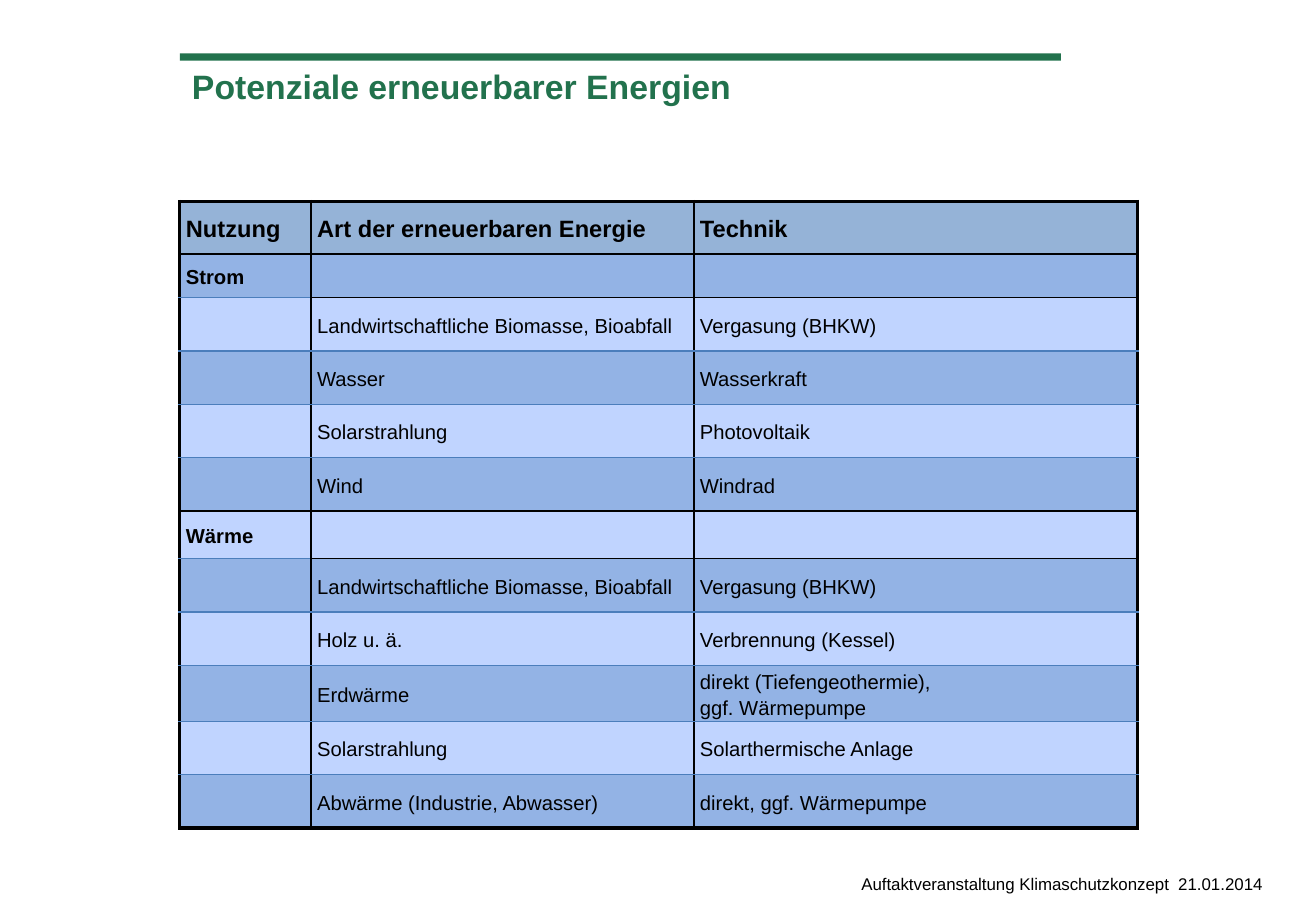
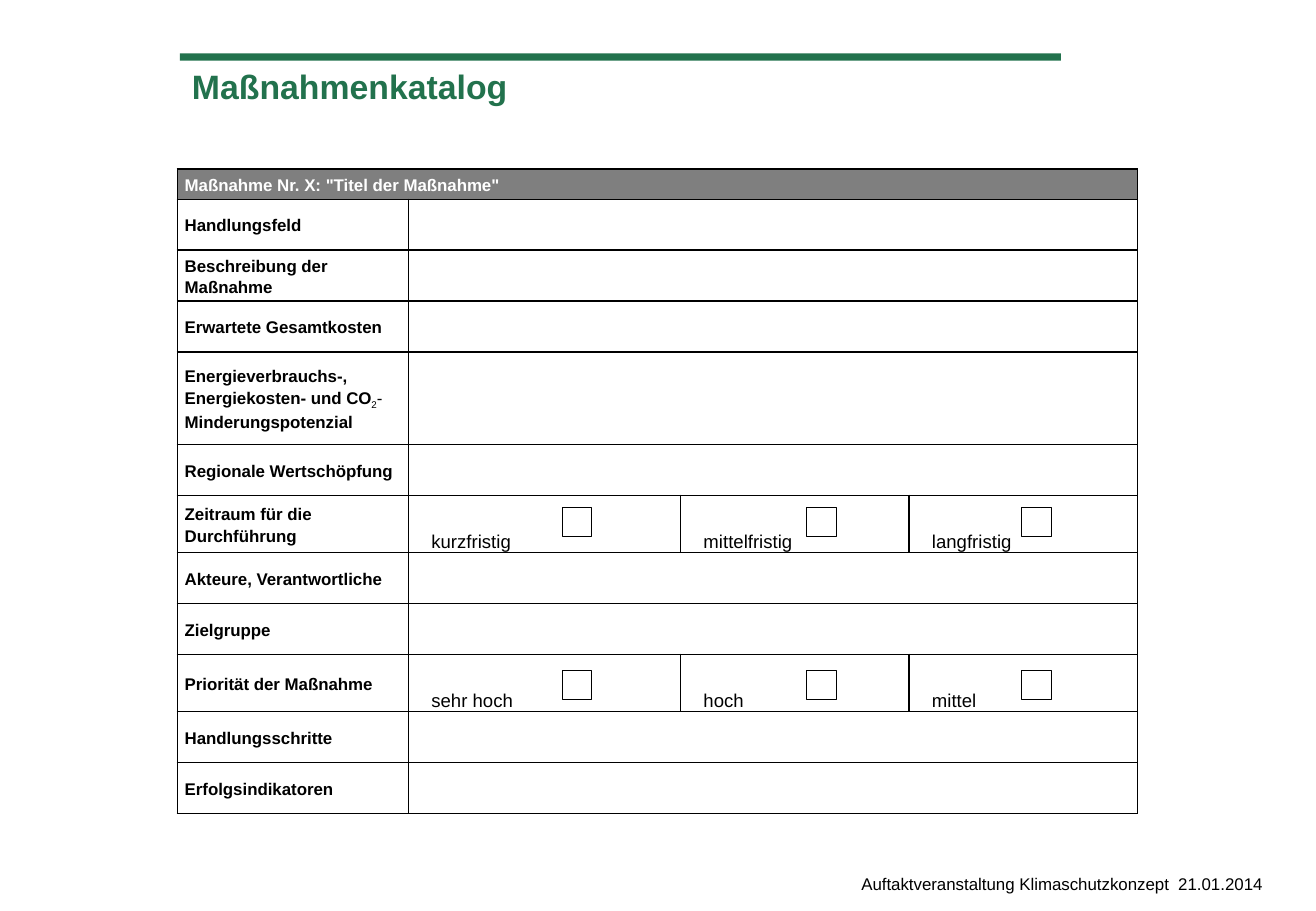
from lxml import etree
from pptx import Presentation
from pptx.dml.color import RGBColor
from pptx.enum.shapes import MSO_SHAPE
from pptx.enum.text import MSO_ANCHOR, PP_ALIGN
from pptx.oxml.ns import qn
from pptx.util import Inches, Pt

RECTANGLE = MSO_SHAPE.RECTANGLE
TOP, MIDDLE, BOTTOM = MSO_ANCHOR.TOP, MSO_ANCHOR.MIDDLE, MSO_ANCHOR.BOTTOM
LEFT = PP_ALIGN.LEFT
color = RGBColor.from_string

FONT = "Arial"
GREEN, BLACK, WHITE, GREY = "22724D", "000000", "FFFFFF", "7F7F7F"
HEADER_BLUE, DARK_BLUE, LIGHT_BLUE = "95B3D7", "93B3E5", "C0D4FF"
FOOTER = "Auftaktveranstaltung Klimaschutzkonzept  21.01.2014"

# Cell lines as colour and width in points
THICK, THIN, BLUE_LINE = (BLACK, 2.25), (BLACK, 1), ("4B7EBC", 0.75)


def write(frame, text, size=10, fill=BLACK, bold=False, spacing=None, baseline=None):
    """Append text to the first paragraph; a newline becomes a line break."""
    paragraph = frame.paragraphs[0]
    paragraph.alignment = LEFT
    if spacing:
        paragraph.line_spacing = spacing
    for index, line in enumerate(text.split("\n")):
        if index:
            paragraph.add_line_break()
        run = paragraph.add_run()
        run.text = line
        run.font.name, run.font.size, run.font.bold = FONT, Pt(size), bold
        run.font.color.rgb = color(fill)
        if baseline:
            run._r.get_or_add_rPr().set("baseline", str(baseline))


def format_cell(cell, lines, inset, fill=None):
    """Set lines (left, right, top, bottom), side margins and fill of a cell."""
    properties = cell._tc.get_or_add_tcPr()
    for side, (line_color, width) in zip("LRTB", lines):
        line = etree.SubElement(properties, qn(f"a:ln{side}"), w=str(Pt(width)))
        solid = etree.SubElement(line, qn("a:solidFill"))
        etree.SubElement(solid, qn("a:srgbClr"), val=line_color)
    cell.margin_left = cell.margin_right = Inches(inset)
    cell.margin_top = cell.margin_bottom = 0
    cell.vertical_anchor = MIDDLE
    if fill:
        cell.fill.solid()
        cell.fill.fore_color.rgb = color(fill)
    else:
        cell.fill.background()


presentation = Presentation()
presentation.slide_width, presentation.slide_height = Inches(10.83), Inches(7.5)
layout = presentation.slide_layouts[5]

# Title position shared by both slides
layout_title = layout.placeholders[0]
layout_title.left, layout_title.top = Inches(1.48), Inches(0.49)
layout_title.width, layout_title.height = Inches(7.16), Inches(0.93)

# Slides with title, footer and an empty table
tables = []
for title, left, top, columns, rows in (
    ("Potenziale erneuerbarer Energien", 1.48, 1.66, [1.08, 3.15, 3.65],
     [0.43, 0.36] + [0.44] * 4 + [0.39] + [0.44] * 5),
    ("Maßnahmenkatalog", 1.46, 1.39, [1.9, 2.24, 1.88, 1.88],
     [0.25] + [0.42] * 3 + [0.76, 0.42, 0.47, 0.42, 0.42, 0.47, 0.42, 0.42]),
):
    slide = presentation.slides.add_slide(layout)
    title_frame = slide.shapes.title.text_frame
    title_frame.vertical_anchor = TOP
    write(title_frame, title, size=20, fill=GREEN, bold=True)

    footer = slide.shapes.add_textbox(Inches(6.99), Inches(7.14), Inches(3.84), Inches(0.31))
    footer.text_frame.word_wrap = True
    write(footer.text_frame, FOOTER)

    table = slide.shapes.add_table(
        len(rows), len(columns), Inches(left), Inches(top),
        Inches(sum(columns)), Inches(sum(rows))).table
    table.first_row = table.horz_banding = False
    for column, width in zip(table.columns, columns):
        column.width = Inches(width)
    for row, height in zip(table.rows, rows):
        row.height = Inches(height)
    tables.append(table)

# Green bar, moved to the layout so that both slides show it
bar = slide.shapes.add_shape(RECTANGLE, Inches(1.48), Inches(0.44), Inches(7.25), Inches(0.06))
bar.shadow.inherit = False
bar.fill.solid()
bar.fill.fore_color.rgb = color(GREEN)
bar.line.fill.background()
layout.shapes.element.append(bar.element)

energy_table, measure_table = tables

# Slide 1: energy sources and techniques
energy_rows = [
    ("Nutzung", "Art der erneuerbaren Energie", "Technik"),
    ("Strom", "", ""),
    ("", "Landwirtschaftliche Biomasse, Bioabfall", "Vergasung (BHKW)"),
    ("", "Wasser", "Wasserkraft"),
    ("", "Solarstrahlung", "Photovoltaik"),
    ("", "Wind", "Windrad"),
    ("Wärme", "", ""),
    ("", "Landwirtschaftliche Biomasse, Bioabfall", "Vergasung (BHKW)"),
    ("", "Holz u. ä.", "Verbrennung (Kessel)"),
    ("", "Erdwärme", "direkt (Tiefengeothermie),\nggf. Wärmepumpe"),
    ("", "Solarstrahlung", "Solarthermische Anlage"),
    ("", "Abwärme (Industrie, Abwasser)", "direkt, ggf. Wärmepumpe"),
]
vertical = [THICK, THIN, THIN, THICK]
first_column_lines = [THICK, THIN] + [BLUE_LINE] * 4 + [THIN] + [BLUE_LINE] * 5 + [THICK]
other_column_lines = list(first_column_lines)
other_column_lines[2] = other_column_lines[7] = THIN  # below the group rows

for row, texts in enumerate(energy_rows):
    fill = HEADER_BLUE if row == 0 else DARK_BLUE if row % 2 else LIGHT_BLUE
    for column, text in enumerate(texts):
        cell = energy_table.cell(row, column)
        horizontal = other_column_lines if column else first_column_lines
        lines = vertical[column:column + 2] + horizontal[row:row + 2]
        format_cell(cell, lines, 0.05, fill)
        if text:
            write(cell.text_frame, text, size=12 if row else 14,
                  bold=row == 0 or column == 0, spacing=1.15)

# Slide 2: form for one measure
measure_labels = [
    'Maßnahme Nr. X: "Titel der Maßnahme"',
    "Handlungsfeld",
    "Beschreibung der Maßnahme",
    "Erwartete Gesamtkosten",
    "Energieverbrauchs-, Energiekosten- und CO",
    "Regionale Wertschöpfung",
    "Zeitraum für die Durchführung",
    "Akteure, Verantwortliche",
    "Zielgruppe",
    "Priorität der Maßnahme",
    "Handlungsschritte",
    "Erfolgsindikatoren",
]
POTENTIAL_ROW = 4
options = {
    6: ("kurzfristig", "mittelfristig", "langfristig"),
    9: ("sehr hoch", "hoch", "mittel"),
}

for row, label in enumerate(measure_labels):
    for column in range(4):
        format_cell(measure_table.cell(row, column), [THIN] * 4, 0.06, None if row else GREY)
    label_cell = measure_table.cell(row, 0)
    write(label_cell.text_frame, label, fill=BLACK if row else WHITE, bold=True, spacing=1.15)
    if row == POTENTIAL_ROW:
        write(label_cell.text_frame, "2", baseline=-25000)
        write(label_cell.text_frame, "-")
        write(label_cell.text_frame, "Minderungspotenzial", bold=True)
    if row in options:
        for column, option in enumerate(options[row], start=1):
            cell = measure_table.cell(row, column)
            cell.vertical_anchor = BOTTOM
            cell.margin_left = Inches(0.19)
            write(cell.text_frame, option, size=11, spacing=1.15)
    else:
        measure_table.cell(row, 1 if row else 0).merge(measure_table.cell(row, 3))

# Check boxes beside the options
for top in (4.18, 5.52):
    for left in (4.63, 6.64, 8.41):
        box = slide.shapes.add_shape(
            RECTANGLE, Inches(left), Inches(top), Inches(0.24), Inches(0.24))
        box.shadow.inherit = False
        box.fill.solid()
        box.fill.fore_color.rgb = color(WHITE)
        box.line.color.rgb = color(BLACK)
        box.line.width = Pt(0.5)

presentation.save("out.pptx")
